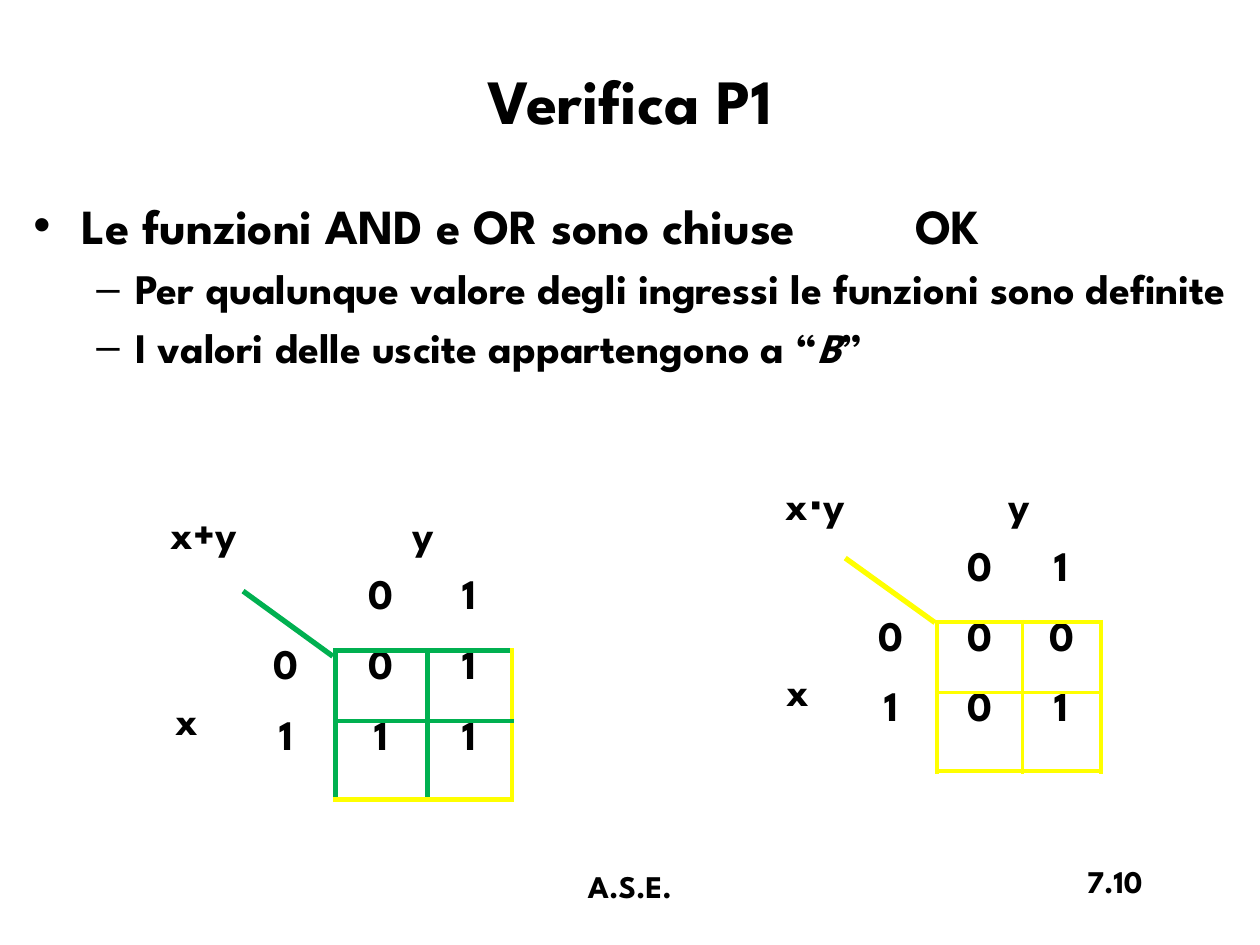
from lxml.etree import SubElement as Sub
from pptx import Presentation
from pptx.dml.color import RGBColor as Rgb
from pptx.enum.shapes import MSO_CONNECTOR as Conn
from pptx.enum.text import MSO_ANCHOR as Anchor, PP_ALIGN as Align
from pptx.oxml.ns import qn
from pptx.util import Inches, Pt

COLORS = {"ink": "000000", "gold": "FFFF00", "green": "00B050"}
FONT = "League Spartan"
UNIT = Inches(1) / 12  # grid of 120 columns by 90 rows
PLAIN = "{2D5ABB26-0587-4C30-8999-92F81FD0307C}"


def grid(*vals):
    return [round(v * UNIT) for v in vals]


class Board:
    def __init__(self, deck):
        self.slide = deck.slides.add_slide(deck.slide_layouts[5])

    def add_runs(self, para, runs, size, align=Align.LEFT):
        """Fill a paragraph from (text, italic) pairs."""
        para.alignment = align
        for text, slant in runs:
            run = para.add_run()
            run.text = text
            font = run.font
            font.name, font.size = FONT, Pt(size)
            font.bold, font.italic = True, slant
            font.color.rgb = Rgb.from_string(COLORS["ink"])

    def title(self, text, box):
        shape = self.slide.shapes.title
        shape.left, shape.top, shape.width, shape.height = grid(*box)
        shape.text_frame.vertical_anchor = Anchor.MIDDLE
        self.add_runs(shape.text_frame.paragraphs[0], [(text, False)], 36, Align.CENTER)

    def frame(self, box):
        text = self.slide.shapes.add_textbox(*grid(*box)).text_frame
        text.word_wrap = True
        return text

    def label(self, text, box, align):
        self.add_runs(self.frame(box).paragraphs[0], [(text, False)], 18, align)

    def bullets(self, items, box):
        """Place (level, runs) items as a bulleted list."""
        text = self.frame(box)
        looks = [("•", 28, 0.38, 0.38), ("–", 24, 0.81, 0.31)]
        for i, (level, runs) in enumerate(items):
            mark, size, left, hang = looks[level]
            para = text.add_paragraph() if i else text.paragraphs[0]
            para.level = level
            para.space_before = Pt(size * 0.2)
            self.add_runs(para, runs, size)
            props = para._p.get_or_add_pPr()
            props.set("marL", str(Inches(left)))
            props.set("indent", str(-Inches(hang)))
            Sub(props, qn("a:buFont"), typeface="Arial")
            Sub(props, qn("a:buChar"), char=mark)
            tabs = Sub(props, qn("a:tabLst"))
            Sub(tabs, qn("a:tab"), pos=str(Inches(7)), algn="l")

    def line(self, start, end, color):
        link = self.slide.shapes.add_connector(Conn.STRAIGHT, *grid(*start, *end))
        link.line.color.rgb = Rgb.from_string(COLORS[color])
        link.line.width = Pt(3)
        Sub(link._element.spPr, qn("a:effectLst"))

    def edges(self, cell, row, col, near, far, inner):
        """Draw the borders that a cell shares with the 2 by 2 value block."""
        sides = {}
        if col >= 2 and row >= 1:
            if row >= 2:
                sides["L"] = (near, 3 if col == 2 else inner)
                sides["R"] = (far, 3) if col == 3 else (near, inner)
                sides["T"] = (near, 3 if row == 2 else inner)
            sides["B"] = {1: (near, 3), 2: (near, inner), 3: (far, 3)}[row]
        elif col == 1 and row >= 2:
            sides["R"] = (near, 3)
        props = cell._tc.get_or_add_tcPr()
        for i, (side, (color, width)) in enumerate(sides.items()):
            edge = props.makeelement(qn(f"a:ln{side}"), {"w": str(Pt(width))})
            fill = Sub(edge, qn("a:solidFill"))
            Sub(fill, qn("a:srgbClr"), val=COLORS[color])
            props.insert(i, edge)

    def truth(self, name, values, spot, cols, rows, near, far, inner):
        """Build the truth table of one function of x and y."""
        texts = [[name, "", "y", ""], ["", "", "0", "1"],
                 ["x", "0", *values[:2]], ["", "1", *values[2:]]]
        shape = self.slide.shapes.add_table(4, 4, *grid(*spot, sum(cols), sum(rows)))
        table = shape.table
        table.first_row = table.horz_banding = False
        table._tbl.tblPr.find(qn("a:tableStyleId")).text = PLAIN
        for part, size in zip(table.columns, grid(*cols)):
            part.width = size
        for part, size in zip(table.rows, grid(*rows)):
            part.height = size
        table.cell(0, 2).merge(table.cell(0, 3))
        table.cell(2, 0).merge(table.cell(3, 0))
        for r, row in enumerate(texts):
            for c, text in enumerate(row):
                cell = table.cell(r, c)
                cell.fill.background()
                cell.margin_left = cell.margin_right = 0
                cell.margin_top = cell.margin_bottom = 0
                if text == "x":
                    cell.vertical_anchor = Anchor.MIDDLE
                if text:
                    para = cell.text_frame.paragraphs[0]
                    para.space_before = Pt(4.8)
                    side = Align.RIGHT if text == name else Align.CENTER
                    self.add_runs(para, [(text, False)], 24, side)
                self.edges(cell, r, c, near, far, inner)


def main():
    deck = Presentation()
    deck.slide_width, deck.slide_height = grid(120, 90)
    board = Board(deck)
    board.title("Verifica P1", (2, 2, 116, 15))
    board.bullets([
        (0, [("Le funzioni AND e OR sono chiuse\tOK", False)]),
        (1, [("Per qualunque valore degli ingressi le funzioni sono definite", False)]),
        (1, [("I valori delle uscite appartengono a “", False), ("B", True), ("”", False)]),
    ], (2, 18, 116, 62))
    board.truth("x⋅y", "0001", (71.5, 46.8), (9, 8.75, 8.15, 7.45),
                (5.75, 6.7, 6.7, 7.5), "gold", "gold", 2.25)
    board.line((89.05, 59.3), (80.5, 53.15), "gold")
    board.truth("x+y", "0111", (13, 49.5), (9.6, 9.35, 8.75, 8.05),
                (5.75, 6.7, 6.7, 7.5), "green", "gold", 3)
    board.line((31.7, 62.5), (23.15, 56.3), "green")
    board.label("A.S.E.", (41, 82, 38, 6), Align.CENTER)
    board.label("7.10", (85, 81.5, 25, 6), Align.RIGHT)
    deck.save("out.pptx")


if __name__ == "__main__":
    main()
